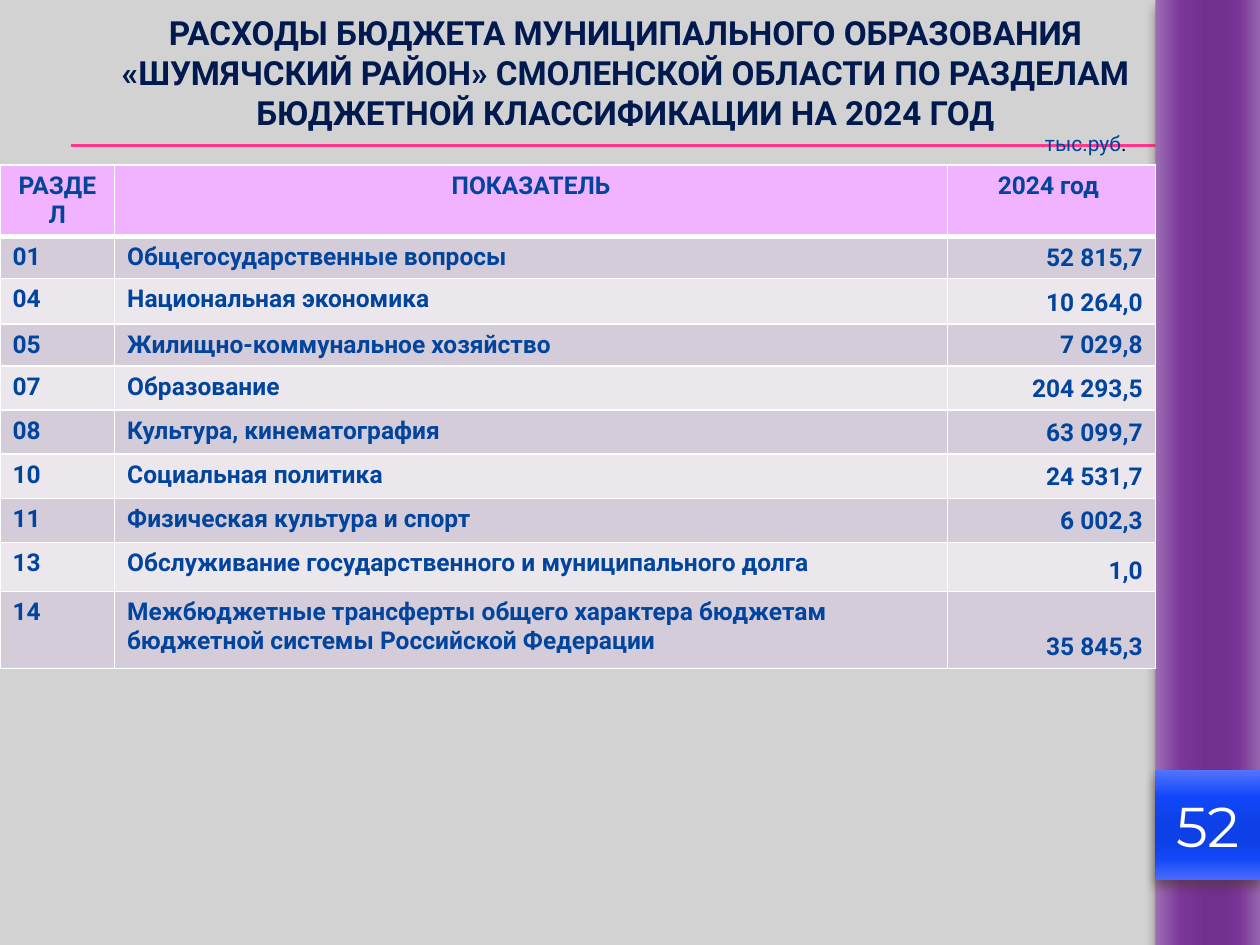
import pptx
import pptx.util
import pptx.dml.color
import pptx.enum.shapes
import pptx.enum.text
import pptx.oxml
import pptx.oxml.ns

RGB = pptx.dml.color.RGBColor.from_string
Inches, Pt = pptx.util.Inches, pptx.util.Pt
ALIGN, ANCHOR = pptx.enum.text.PP_ALIGN, pptx.enum.text.MSO_ANCHOR
RECT = pptx.enum.shapes.MSO_SHAPE.RECTANGLE
STRAIGHT = pptx.enum.shapes.MSO_CONNECTOR.STRAIGHT
NS = pptx.oxml.ns.nsdecls("a")

GREY, PINK, NAVY, BLUE = RGB("D2D2D2"), RGB("FF388C"), RGB("001A4F"), RGB("00449E")
WHITE, BLACK, OUTLINE, SHADOW = RGB("FFFFFF"), RGB("000000"), RGB("4E005F"), RGB("4E3B30")
HEADER, ODD, EVEN = RGB("F1B2FF"), RGB("D4CCD8"), RGB("EBE7EC")
STOPS = (0, 25, 50, 65, 80, 100)
PURPLES = [RGB(c) for c in ("9C6FB3", "7A3599", "71308E", "71308E", "7A3598", "9566AD")]
BLUES = [RGB(c) for c in ("5374FF", "1147F8", "0E40E7", "0E40E7", "1147F6", "476AFD")]

TITLE = ("РАСХОДЫ БЮДЖЕТА МУНИЦИПАЛЬНОГО ОБРАЗОВАНИЯ «ШУМЯЧСКИЙ РАЙОН» "
         "СМОЛЕНСКОЙ ОБЛАСТИ ПО РАЗДЕЛАМ БЮДЖЕТНОЙ КЛАССИФИКАЦИИ НА 2024 ГОД")
ROWS = [
    ("РАЗДЕЛ", "ПОКАЗАТЕЛЬ", "2024 год "),
    ("01", "Общегосударственные вопросы", "52 815,7"),
    ("04", "Национальная экономика", "10 264,0"),
    ("05", "Жилищно-коммунальное хозяйство", "7 029,8"),
    ("07", "Образование", "204 293,5"),
    ("08", "Культура, кинематография", "63 099,7"),
    ("10", "Социальная политика", "24 531,7"),
    ("11", "Физическая культура и спорт", "6 002,3"),
    ("13", "Обслуживание государственного и муниципального долга", "1,0"),
    ("14", "Межбюджетные трансферты общего характера бюджетам бюджетной системы "
           "Российской Федерации", "35 845,3"),
]
COL_WIDTHS = (0.91, 6.61, 1.65)
ROW_HEIGHTS = (0.34, 0.3, 0.36, 0.26, 0.35, 0.35, 0.35, 0.35, 0.39, 0.61)
WIDTH, HEIGHT = 10, 7.5
BAND_LEFT = sum(COL_WIDTHS)
BAND_WIDTH = WIDTH - BAND_LEFT


def add_run(p, text, size, color, font="Roboto", bold=False):
    r = p.add_run()
    r.text = text
    r.font.size, r.font.name, r.font.bold = Pt(size), font, bold
    r.font.color.rgb = color
    return r


def add_text_box(s, box, anchor):
    tf = s.shapes.add_textbox(*map(Inches, box)).text_frame
    tf.word_wrap = True
    tf.vertical_anchor = anchor
    return tf


def add_rule(s, y):
    line = s.shapes.add_connector(STRAIGHT, *map(Inches, (0.56, y, WIDTH, y)))
    line.line.color.rgb, line.line.width = PINK, Pt(0.75)
    line._element.spPr.append(pptx.oxml.parse_xml(f"<a:effectLst {NS}/>"))


def add_gradient_rect(s, top, height, colors, angle):
    sp = s.shapes.add_shape(RECT, *map(Inches, (BAND_LEFT, top, BAND_WIDTH, height)))
    sp.line.fill.background()
    stops = "".join(f'<a:gs pos="{pos * 1000}"><a:srgbClr val="{c}"/></a:gs>'
                    for pos, c in zip(STOPS, colors))
    gradient = pptx.oxml.parse_xml(
        f'<a:gradFill {NS} rotWithShape="1"><a:gsLst>{stops}</a:gsLst>'
        f'<a:lin ang="{angle * 60000}" scaled="0"/></a:gradFill>')
    spPr = sp._element.spPr
    spPr.insert(list(spPr).index(spPr.find(pptx.oxml.ns.qn("a:ln"))), gradient)
    spPr.append(pptx.oxml.parse_xml(
        f'<a:effectLst {NS}><a:outerShdw blurRad="{Pt(6)}" dist="{Pt(4)}" dir="5400000" '
        f'rotWithShape="0"><a:srgbClr val="{SHADOW}"><a:alpha val="60000"/></a:srgbClr>'
        '</a:outerShdw></a:effectLst>'))
    return sp


def set_borders(cell, bottom_of_header, top_of_body):
    tcPr = cell._tc.get_or_add_tcPr()
    widths = {"L": 1, "R": 1, "T": 3 if top_of_body else 1, "B": 3 if bottom_of_header else 1}
    for i, (side, width) in enumerate(widths.items()):
        tcPr.insert(i, pptx.oxml.parse_xml(
            f'<a:ln{side} {NS} w="{Pt(width)}"><a:solidFill><a:srgbClr val="{WHITE}"/>'
            f'</a:solidFill></a:ln{side}>'))


def add_budget_table(s):
    table = s.shapes.add_table(
        len(ROWS), len(COL_WIDTHS),
        *map(Inches, (0, 1.31, BAND_LEFT, sum(ROW_HEIGHTS)))).table
    for col, width in zip(table.columns, COL_WIDTHS):
        col.width = Inches(width)
    for i, (values, height) in enumerate(zip(ROWS, ROW_HEIGHTS)):
        table.rows[i].height = Inches(height)
        for j, value in enumerate(values):
            cell = table.cell(i, j)
            cell.fill.solid()
            cell.fill.fore_color.rgb = HEADER if i == 0 else ODD if i % 2 else EVEN
            set_borders(cell, i == 0, i == 1)
            p = cell.text_frame.paragraphs[0]
            is_amount = i > 0 and j == 2
            p.alignment = ALIGN.CENTER if i == 0 else ALIGN.RIGHT if is_amount else ALIGN.LEFT
            cell.vertical_anchor = ANCHOR.BOTTOM if is_amount else ANCHOR.TOP
            add_run(p, value, 14, BLUE, bold=True)


def main():
    prs = pptx.Presentation()
    prs.slide_width, prs.slide_height = Inches(WIDTH), Inches(HEIGHT)
    s = prs.slides.add_slide(prs.slide_layouts[6])
    s.background.fill.solid()
    s.background.fill.fore_color.rgb = GREY

    for y in (1.15, 1.16):
        add_rule(s, y)
    add_gradient_rect(s, 0, HEIGHT, PURPLES, 0)

    p = add_text_box(s, (0.43, 0, 9.07, 1.15), ANCHOR.MIDDLE).paragraphs[0]
    p.alignment = ALIGN.CENTER
    r = add_run(p, TITLE, 19, NAVY, bold=True)
    r.font._element.insert(0, pptx.oxml.parse_xml(
        f'<a:ln {NS} w="{Pt(0.71)}"><a:solidFill><a:srgbClr val="{OUTLINE}"/>'
        '</a:solidFill></a:ln>'))

    add_budget_table(s)

    tf = add_gradient_rect(s, 6.11, 0.87, BLUES, 90).text_frame
    tf.margin_left = tf.margin_right = 0
    tf.vertical_anchor = ANCHOR.MIDDLE
    p = tf.paragraphs[0]
    p.alignment = ALIGN.CENTER
    add_run(p, "52", 32, WHITE, font="Montserrat")

    p = add_text_box(s, (8.07, 0.99, 0.97, 0.3), ANCHOR.TOP).paragraphs[0]
    p.alignment = ALIGN.RIGHT
    add_run(p, "тыс.руб", 12, BLUE)
    add_run(p, ".", 12, BLACK)

    prs.save("out.pptx")


if __name__ == "__main__":
    main()
